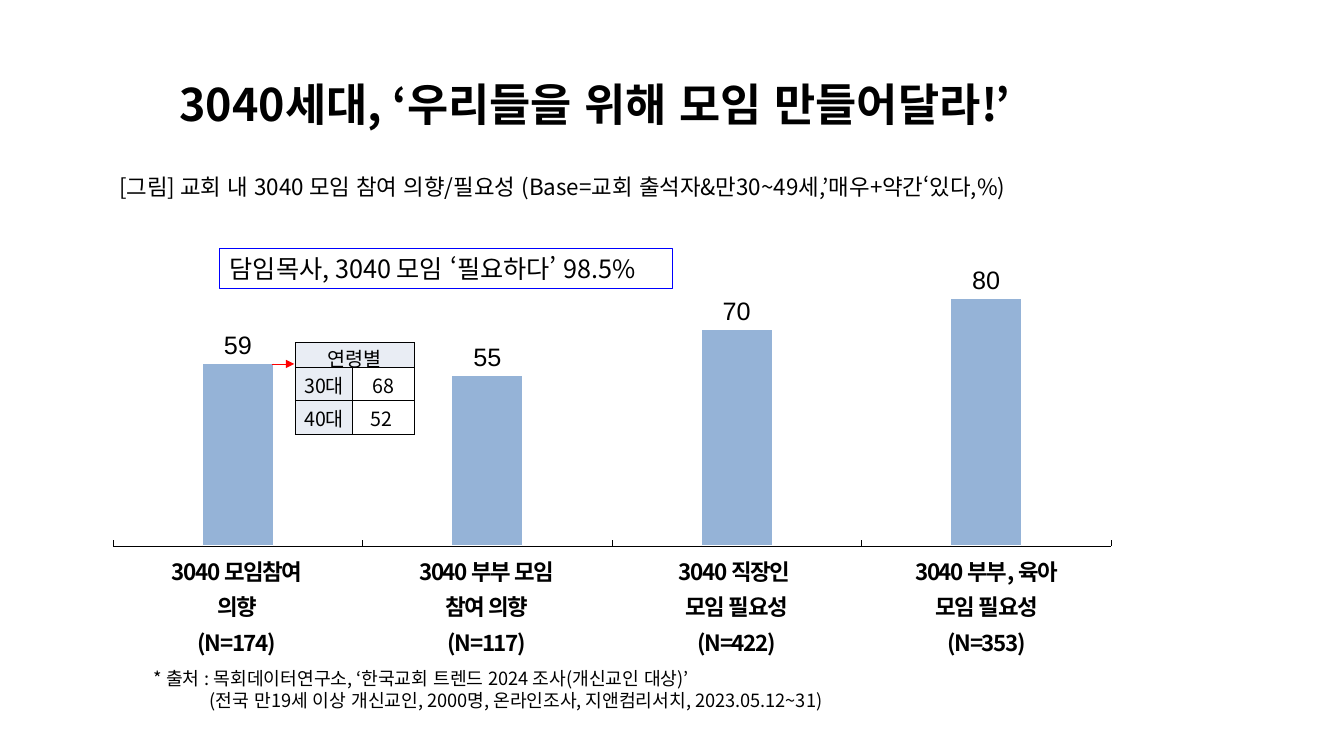
from lxml.etree import SubElement
from pptx import Presentation
from pptx.chart.data import CategoryChartData
from pptx.dml.color import RGBColor
from pptx.enum.chart import XL_CHART_TYPE, XL_LABEL_POSITION, XL_TICK_LABEL_POSITION, XL_TICK_MARK
from pptx.enum.lang import MSO_LANGUAGE_ID
from pptx.enum.shapes import MSO_CONNECTOR, MSO_SHAPE
from pptx.enum.text import MSO_ANCHOR, MSO_AUTO_SIZE, PP_ALIGN
from pptx.oxml import parse_xml
from pptx.oxml.ns import nsdecls, qn
from pptx.util import Pt

FONT = "Noto Sans CJK KR"
COLORS = {"text": "000000", "bar": "95B3D7", "white": "FFFFFF",
          "frame": "0000FF", "arrow": "FF0000", "header": "E9EDF4"}


def rgb(name):
    return RGBColor.from_string(COLORS[name])


def add_run(paragraph, text, size, bold=False, spacing=None):
    run = paragraph.add_run()
    run.text = text
    run.font.size = Pt(size)
    run.font.bold = bold
    run.font.color.rgb = rgb("text")
    run.font.name = FONT
    run.font.language_id = MSO_LANGUAGE_ID.KOREAN
    properties = run.font._element
    SubElement(properties, qn("a:ea")).set("typeface", FONT)
    if spacing is not None:
        properties.set("spc", str(spacing))


def fill_frame(frame, lines, size, bold=False, wrap=True):
    frame.word_wrap = wrap
    frame.auto_size = MSO_AUTO_SIZE.SHAPE_TO_FIT_TEXT
    for i, line in enumerate(lines):
        paragraph = frame.paragraphs[0] if i == 0 else frame.add_paragraph()
        paragraph.alignment = PP_ALIGN.LEFT
        add_run(paragraph, line, size, bold)


def add_text(slide, box, lines, size, bold=False, wrap=True):
    frame = slide.shapes.add_textbox(*map(Pt, box)).text_frame
    fill_frame(frame, lines, size, bold, wrap)
    return frame


def add_callout(slide, box, text, size):
    callout = slide.shapes.add_shape(MSO_SHAPE.RECTANGLE, *map(Pt, box))
    callout.shadow.inherit = False
    callout.fill.background()
    callout.line.color.rgb = rgb("frame")
    callout.line.width = Pt(0.75)
    callout.text_frame.margin_right = 0
    fill_frame(callout.text_frame, [text], size, wrap=False)


def add_arrow(slide, x1, x2, y):
    arrow = slide.shapes.add_connector(MSO_CONNECTOR.STRAIGHT, Pt(x1), Pt(y), Pt(x2), Pt(y))
    arrow.line.color.rgb = rgb("arrow")
    arrow.line.width = Pt(0.5)
    SubElement(arrow.line._get_or_add_ln(), qn("a:tailEnd")).set("type", "triangle")
    SubElement(arrow._element.spPr, qn("a:effectLst"))


def add_plain_table(slide, box, widths, heights):
    table = slide.shapes.add_table(len(heights), len(widths), *map(Pt, box)).table
    table.first_row = table.horz_banding = False
    for column, width in zip(table.columns, widths):
        column.width = Pt(width)
    for row, height in zip(table.rows, heights):
        row.height = Pt(height)
    return table


def fill_cell(cell, lines, size, fill=None, bold=False, line_spacing=None, spacing=None):
    cell.margin_left = cell.margin_right = cell.margin_top = Pt(0.75)
    cell.margin_bottom = 0
    if fill:
        cell.fill.solid()
        cell.fill.fore_color.rgb = rgb(fill)
    else:
        cell.fill.background()
    for i, line in enumerate(lines):
        frame = cell.text_frame
        paragraph = frame.paragraphs[0] if i == 0 else frame.add_paragraph()
        paragraph.alignment = PP_ALIGN.CENTER
        if line_spacing:
            paragraph.line_spacing = line_spacing
        add_run(paragraph, line, size, bold, spacing)


def border_cell(cell):
    properties = cell._tc.get_or_add_tcPr()
    for i, side in enumerate(("lnL", "lnR", "lnT", "lnB")):
        properties.insert(i, parse_xml(
            f'<a:{side} {nsdecls("a")} w="12700"><a:solidFill>'
            f'<a:srgbClr val="{COLORS["text"]}"/></a:solidFill></a:{side}>'))


def add_intent_chart(slide, box, values):
    data = CategoryChartData()
    data.categories = [str(i + 1) for i in range(len(values))]
    data.add_series("Series 1", values)
    chart = slide.shapes.add_chart(XL_CHART_TYPE.COLUMN_CLUSTERED, *map(Pt, box), data).chart
    chart.has_legend = chart.has_title = False
    chart.font.name, chart.font.size = "Arial", Pt(9)
    chart.font.color.rgb = rgb("text")

    # Axes
    axis = chart.category_axis
    axis.tick_label_position = XL_TICK_LABEL_POSITION.NONE
    axis.major_tick_mark = XL_TICK_MARK.INSIDE
    axis.format.line.color.rgb = rgb("text")
    axis.format.line.width = Pt(0.25)
    scale = chart.value_axis
    scale.minimum_scale, scale.maximum_scale = 0, 90
    scale.has_major_gridlines = scale.visible = False

    # Bars and their labels
    plot = chart.plots[0]
    plot.gap_width, plot.overlap, plot.vary_by_categories = 250, -5, False
    bars = plot.series[0].format
    bars.fill.solid()
    bars.fill.fore_color.rgb = rgb("bar")
    bars.line.color.rgb = rgb("white")
    bars.line.width = Pt(0.75)
    plot.has_data_labels = True
    labels = plot.data_labels
    labels.show_value = True
    labels.number_format, labels.number_format_is_linked = "0", False
    labels.position = XL_LABEL_POSITION.OUTSIDE_END
    labels.font.name, labels.font.size, labels.font.bold = "Arial", Pt(18), False
    labels.font.color.rgb = rgb("text")

    # Plot area inside the chart frame
    area = chart._chartSpace.chart.plotArea
    for old in area.findall(qn("c:layout")):
        area.remove(old)
    layout = parse_xml(f'<c:layout {nsdecls("c")}><c:manualLayout/></c:layout>')
    for tag, value in (("layoutTarget", "inner"), ("xMode", "edge"), ("yMode", "edge"),
                       ("x", 0.02), ("y", 0.09), ("w", 0.96), ("h", 0.74)):
        SubElement(layout[0], qn(f"c:{tag}")).set("val", str(value))
    area.insert(0, layout)


def add_group_labels(slide, box, groups):
    table = add_plain_table(slide, box, [box[2] / len(groups)] * len(groups), [box[3]])
    for cell, lines in zip(table.rows[0].cells, groups):
        fill_cell(cell, lines, 16, bold=True, line_spacing=1.1, spacing=-100)


def add_age_table(slide, box, title, rows):
    table = add_plain_table(slide, box, [41, 44], [16.5, 24, 24])
    table.cell(0, 0).merge(table.cell(0, 1))
    fill_cell(table.cell(0, 0), [title], 14, "header")
    for r, (age, share) in enumerate(rows, 1):
        fill_cell(table.cell(r, 0), [age], 14, "header")
        fill_cell(table.cell(r, 1), [share], 14, "white")
    for cell in table.iter_cells():
        cell.vertical_anchor = MSO_ANCHOR.MIDDLE
        border_cell(cell)


def main():
    prs = Presentation()
    prs.slide_width, prs.slide_height = Pt(960), Pt(540)
    slide = prs.slides.add_slide(prs.slide_layouts[6])

    # Heading and figure caption
    add_text(slide, (78, 120.2, 862, 47.5),
             ["[그림] 교회 내 3040 모임 참여 의향/필요성 (Base=교회 출석자&만30~49세,’매우+약간‘있다,%)"], 16)
    add_text(slide, (121, 51, 679, 46), ["3040세대, ‘우리들을 위해 모임 만들어달라!’"],
             32, bold=True, wrap=False)

    # Chart with group labels below
    add_intent_chart(slide, (66, 167, 742.3, 268.6), (59, 55, 70, 80))
    add_group_labels(slide, (80, 393, 714.2, 81.4), [
        ("3040 모임참여", "의향", "(N=174)"),
        ("3040 부부 모임", "참여 의향", "(N=117)"),
        ("3040 직장인 ", "모임 필요성", "(N=422)"),
        ("3040 부부, 육아", "모임 필요성", "(N=353)")])

    # Pastor callout and age breakdown
    add_callout(slide, (157, 177.2, 323.3, 29), "담임목사, 3040 모임 ‘필요하다’ 98.5%", 18)
    add_age_table(slide, (211, 244.8, 85, 64.5), "연령별", [("30대", "68"), ("40대", "52 ")])
    add_arrow(slide, 194, 210.2, 260)

    # Source
    source = add_text(slide, (102.7, 473, 705, 39), [
        "* 출처 : 목회데이터연구소, ‘한국교회 트렌드 2024 조사(개신교인 대상)’",
        "(전국 만19세 이상 개신교인, 2000명, 온라인조사, 지앤컴리서치, 2023.05.12~31)"], 13)
    source.paragraphs[1]._p.get_or_add_pPr().set("marL", str(Pt(40)))

    prs.save("out.pptx")


if __name__ == "__main__":
    main()
